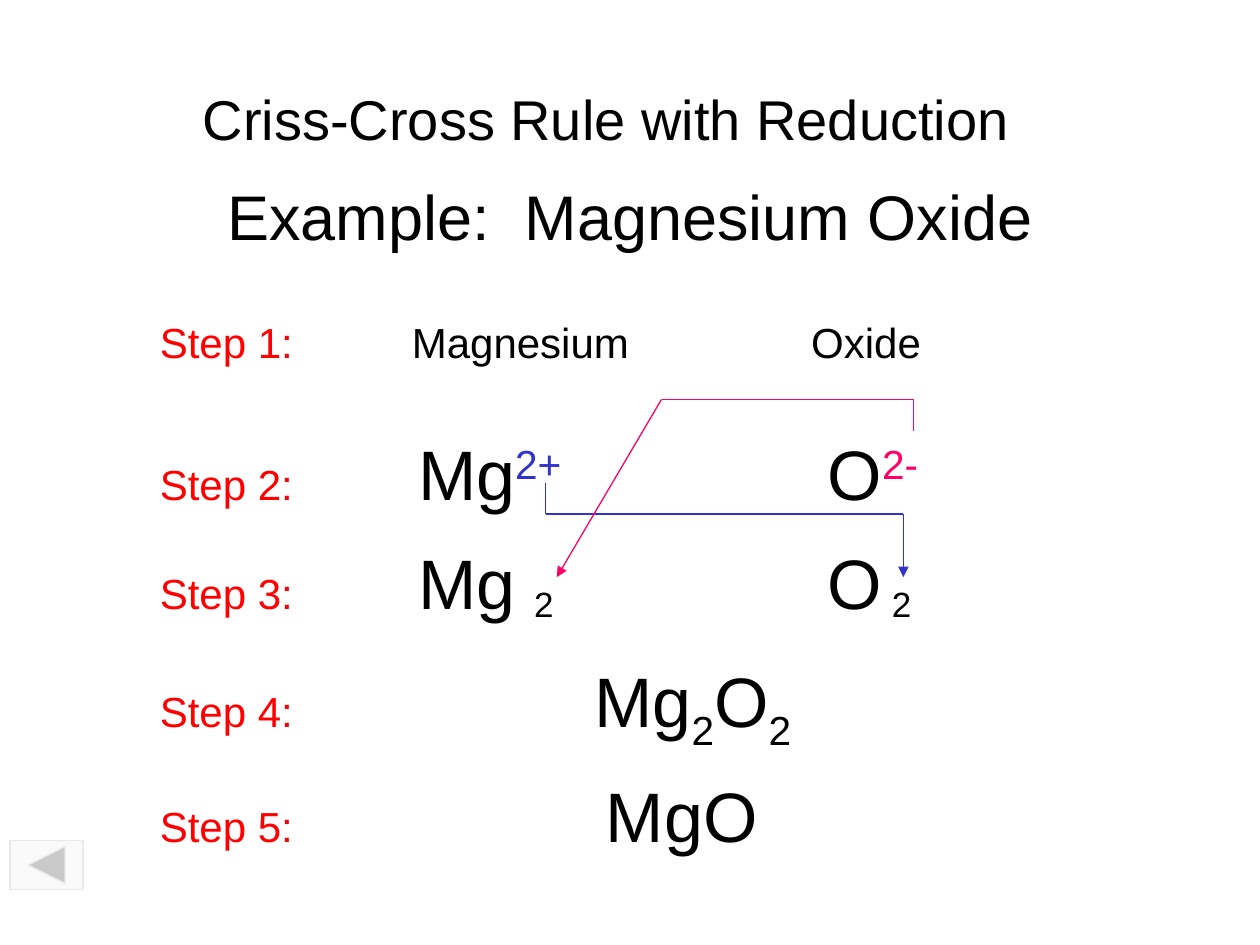
from dataclasses import dataclass
from itertools import pairwise

from lxml.etree import SubElement
from pptx import Presentation
from pptx.dml.color import RGBColor
from pptx.enum.shapes import MSO_CONNECTOR, MSO_SHAPE
from pptx.enum.text import MSO_ANCHOR, PP_ALIGN
from pptx.oxml.ns import qn
from pptx.util import Inches, Pt

BLACK = RGBColor(0x00, 0x00, 0x00)
RED = RGBColor(0xFF, 0x00, 0x00)
BLUE = RGBColor(0x33, 0x33, 0xCC)
PINK = RGBColor(0xFF, 0x00, 0x66)
PALE = RGBColor(0xF7, 0xF7, 0xF7)
GRAY = RGBColor(0xEA, 0xEA, 0xEA)
FONT = "Arial"


@dataclass(frozen=True)
class Piece:
    text: str
    size: int = 40
    color: RGBColor = BLACK
    base: int = 0


@dataclass(frozen=True)
class Label:
    left: float
    top: float
    width: float
    height: float
    pieces: tuple[Piece, ...]
    tabs: tuple[float, ...] = ()
    center: bool = False


@dataclass(frozen=True)
class Route:
    color: RGBColor
    points: tuple[tuple[float, float], ...]


def step(number: int, top: float, width: float, height: float,
         tabs: tuple[float, ...], *pieces: Piece) -> Label:
    head = Piece(f"Step {number}:", 24, RED)
    return Label(1.17, top, width, height, (head, *pieces), tabs)


LABELS = (
    Label(0.75, 1.08, 8.5, 1.25,
          (Piece("Example:  Magnesium Oxide", 36),), center=True),
    step(1, 2.46, 6.3, 0.5, (2, 5.17), Piece("\tMagnesium\tOxide", 24)),
    step(2, 3.37, 6.3, 0.77, (2.05, 5.3), Piece("\tMg"),
         Piece("2+", color=BLUE, base=30), Piece("\tO"),
         Piece("2-", color=PINK, base=30)),
    step(3, 4.23, 6, 0.77, (2.05, 5.3), Piece("\tMg\tO")),
    Label(4.14, 4.57, 0.36, 0.43, (Piece("2", 20),)),
    Label(6.98, 4.57, 0.36, 0.43, (Piece("2", 20),)),
    step(4, 5.17, 5.3, 0.77, (3.45,), Piece("\tMg"),
         Piece("2", base=-25), Piece("O"), Piece("2", base=-25)),
    step(5, 6.08, 5.05, 0.77, (3.54,), Piece("\tMgO")),
    Label(1.51, 0.62, 6.65, 0.64,
          (Piece("Criss-Cross Rule with Reduction", 32),)),
)

ROUTES = (
    Route(BLUE, ((4.33, 3.83), (4.33, 4.08), (7.17, 4.08), (7.17, 4.58))),
    Route(PINK, ((7.25, 3.42), (7.25, 3.17), (5.25, 3.17), (4.42, 4.58))),
)


def write(slide, label: Label) -> None:
    box = slide.shapes.add_textbox(Inches(label.left), Inches(label.top),
                                   Inches(label.width), Inches(label.height))
    frame = box.text_frame
    frame.word_wrap = True
    line = frame.paragraphs[0]
    if label.center:
        frame.vertical_anchor = MSO_ANCHOR.MIDDLE
        line.alignment = PP_ALIGN.CENTER
    if label.tabs:
        stops = SubElement(line._p.get_or_add_pPr(), qn("a:tabLst"))
        for place in label.tabs:
            SubElement(stops, qn("a:tab"), pos=str(Inches(place)), algn="l")
    for piece in label.pieces:
        run = line.add_run()
        run.text = piece.text
        run.font.name = FONT
        run.font.size = Pt(piece.size)
        run.font.color.rgb = piece.color
        if piece.base:
            run._r.get_or_add_rPr().set("baseline", str(piece.base * 1000))


def trace(slide, route: Route) -> None:
    for start, end in pairwise(route.points):
        line = slide.shapes.add_connector(
            MSO_CONNECTOR.STRAIGHT, *map(Inches, start + end))
        line.line.color.rgb = route.color
        line.line.width = Pt(0.75)
        if end == route.points[-1]:
            SubElement(line.line._get_or_add_ln(), qn("a:tailEnd"),
                       type="triangle")
        SubElement(line._element.spPr, qn("a:effectLst"))


def add_back(slide) -> None:
    back = slide.shapes.add_shape(
        MSO_SHAPE.ACTION_BUTTON_BACK_OR_PREVIOUS,
        Inches(0.08), Inches(6.67), Inches(0.58), Inches(0.39))
    back.shadow.inherit = False
    back.fill.solid()
    back.fill.fore_color.rgb = PALE
    tint = back._element.spPr.find(f"{qn('a:solidFill')}/{qn('a:srgbClr')}")
    SubElement(tint, qn("a:alpha"), val="50000")
    back.line.color.rgb = GRAY
    back.line.width = Pt(0.75)


def main() -> None:
    deck = Presentation()
    deck.slide_width = Inches(10)
    deck.slide_height = Inches(7.5)
    slide = deck.slides.add_slide(deck.slide_layouts[6])
    for label in LABELS:
        write(slide, label)
    for route in ROUTES:
        trace(slide, route)
    add_back(slide)
    deck.save("out.pptx")


if __name__ == "__main__":
    main()
